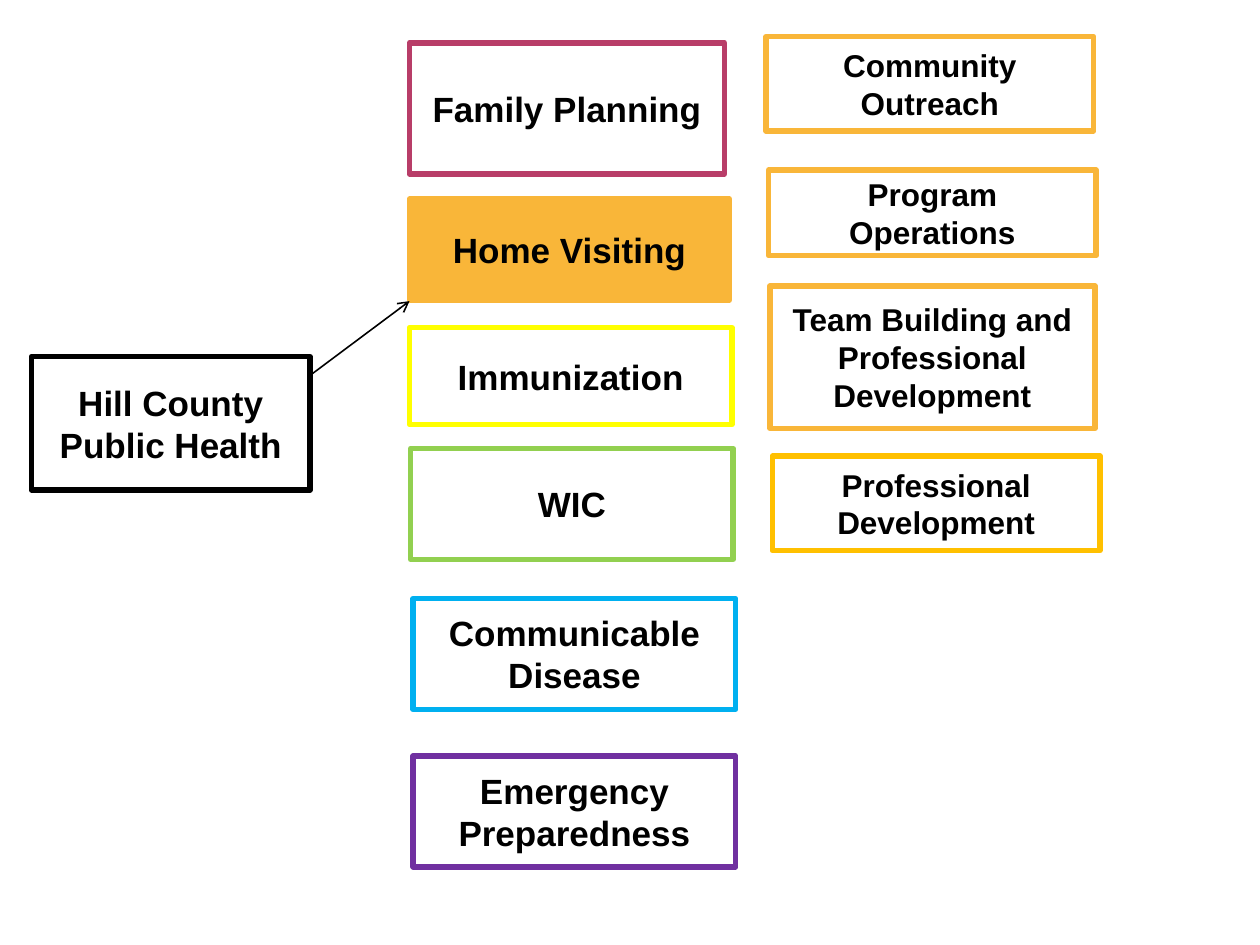
from dataclasses import dataclass

from lxml.etree import SubElement
from pptx import Presentation
from pptx.dml.color import RGBColor
from pptx.enum.shapes import MSO_CONNECTOR, MSO_SHAPE
from pptx.enum.text import MSO_ANCHOR, PP_ALIGN
from pptx.oxml.ns import qn
from pptx.util import Inches, Pt


@dataclass(frozen=True)
class Theme:
    font: str = "Arial"
    program_size: float = 20
    activity_size: float = 18
    border: float = 3.15
    arrow: float = 0.9
    black: str = "000000"
    white: str = "FFFFFF"
    magenta: str = "B83D68"
    orange: str = "F9B639"
    yellow: str = "FFFF00"
    green: str = "92D050"
    blue: str = "00B0F0"
    purple: str = "7030A0"
    gold: str = "FFC000"


THEME = Theme()


@dataclass(frozen=True)
class Box:
    text: str
    left: float
    top: float
    width: float
    height: float
    border: str
    fill: str = THEME.white
    size: float = THEME.program_size


AGENCY = Box("Hill County Public Health", 0.25, 2.83, 2.21, 1.06, THEME.black)

PROGRAMS = [
    Box("Family Planning", 3.25, 0.34, 2.5, 1.04, THEME.magenta),
    Box("Home Visiting", 3.25, 1.58, 2.54, 0.8, THEME.orange, THEME.orange),
    Box("Immunization", 3.25, 2.6, 2.56, 0.77, THEME.yellow),
    Box("WIC", 3.26, 3.56, 2.56, 0.88, THEME.green),
    Box("Communicable Disease", 3.28, 4.75, 2.56, 0.88, THEME.blue),
    Box("Emergency Preparedness", 3.28, 6, 2.56, 0.88, THEME.purple),
]

ACTIVITIES = [
    Box("Community Outreach", 6.08, 0.29, 2.6, 0.75, THEME.orange,
        size=THEME.activity_size),
    Box("Program Operations", 6.1, 1.35, 2.6, 0.68, THEME.orange,
        size=THEME.activity_size),
    Box("Team Building and Professional Development", 6.11, 2.27, 2.58, 1.13,
        THEME.orange, size=THEME.activity_size),
    Box("Professional Development", 6.13, 3.62, 2.6, 0.75, THEME.gold,
        size=THEME.activity_size),
]


def rgb(color: str) -> RGBColor:
    return RGBColor.from_string(color)


def draw_box(s, box: Box) -> None:
    sp = s.shapes.add_shape(
        MSO_SHAPE.RECTANGLE, Inches(box.left), Inches(box.top),
        Inches(box.width), Inches(box.height))
    sp.shadow.inherit = False
    sp.fill.solid()
    sp.fill.fore_color.rgb = rgb(box.fill)
    sp.line.color.rgb = rgb(box.border)
    sp.line.width = Pt(THEME.border)
    tf = sp.text_frame
    tf.word_wrap = True
    tf.vertical_anchor = MSO_ANCHOR.MIDDLE
    p = tf.paragraphs[0]
    p.text = box.text
    p.alignment = PP_ALIGN.CENTER
    p.font.name = THEME.font
    p.font.size = Pt(box.size)
    p.font.bold = True
    p.font.color.rgb = rgb(THEME.black)


def draw_arrow(s, start: tuple[float, float], end: tuple[float, float]) -> None:
    line = s.shapes.add_connector(
        MSO_CONNECTOR.STRAIGHT, *map(Inches, start), *map(Inches, end))
    line.line.color.rgb = rgb(THEME.black)
    line.line.width = Pt(THEME.arrow)
    SubElement(line.line._get_or_add_ln(), qn("a:tailEnd"), type="arrow")
    SubElement(line._element.spPr, qn("a:effectLst"))


def main() -> None:
    prs = Presentation()
    prs.slide_width, prs.slide_height = Inches(10), Inches(7.5)
    s = prs.slides.add_slide(prs.slide_layouts[6])
    for box in [AGENCY, *PROGRAMS, *ACTIVITIES]:
        draw_box(s, box)
    draw_arrow(s, (AGENCY.left + AGENCY.width, 2.98), (3.25, 2.39))
    prs.save("out.pptx")


if __name__ == "__main__":
    main()
